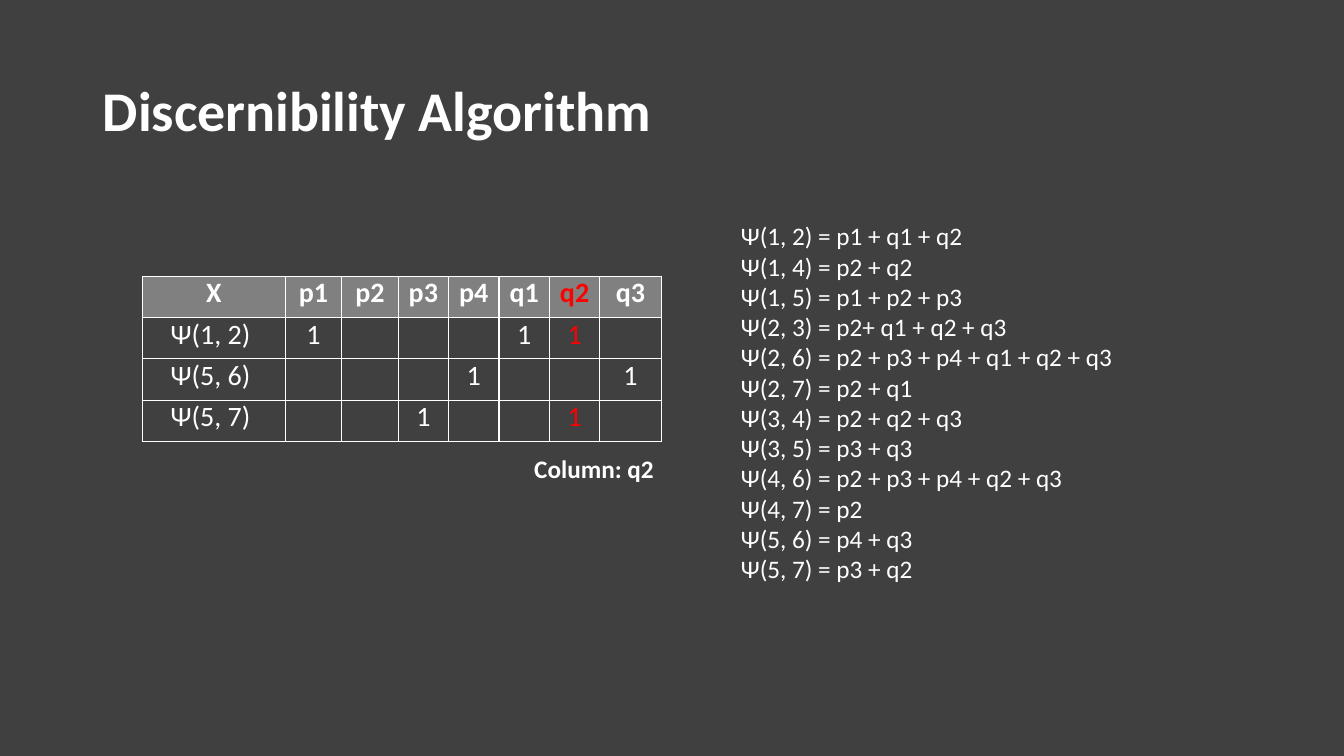
from dataclasses import dataclass

from lxml.etree import SubElement
from pptx import Presentation
from pptx.dml.color import RGBColor as Color
from pptx.enum.text import MSO_ANCHOR as Anchor, MSO_AUTO_SIZE as Fit, PP_ALIGN as Align
from pptx.oxml.ns import qn
from pptx.util import Inches, Pt


@dataclass(frozen=True)
class Theme:
    font: str = "Calibri"
    back: str = "404040"
    head: str = "808080"
    text: str = "FFFFFF"
    mark: str = "FF0000"
    title: int = 40
    cell: int = 20
    body: int = 18
    rule: int = 1


@dataclass(frozen=True)
class Row:
    label: str
    terms: tuple[str, ...]


@dataclass(frozen=True)
class Note:
    box: tuple[float, float, float, float]
    text: str
    bold: bool = False
    level: int = 0


THEME = Theme()
CHOSEN = "q2"
HEADS = ("X", "p1", "p2", "p3", "p4", "q1", "q2", "q3")
WIDTHS = (1.42, 0.56, 0.56, 0.5, 0.5, 0.5, 0.5, 0.61)
HEIGHT = 0.41
ROWS = (
    Row("Ψ(1, 2) ", ("p1", "q1", "q2")),
    Row("Ψ(5, 6) ", ("p4", "q3")),
    Row("Ψ(5, 7) ", ("p3", "q2")),
)
RULES = """Ψ(1, 2) = p1 + q1 + q2
Ψ(1, 4) = p2 + q2
Ψ(1, 5) = p1 + p2 + p3
Ψ(2, 3) = p2+ q1 + q2 + q3
Ψ(2, 6) = p2 + p3 + p4 + q1 + q2 + q3
Ψ(2, 7) = p2 + q1
Ψ(3, 4) = p2 + q2 + q3
Ψ(3, 5) = p3 + q3
Ψ(4, 6) = p2 + p3 + p4 + q2 + q3
Ψ(4, 7) = p2
Ψ(5, 6) = p4 + q3
Ψ(5, 7) = p3 + q2"""
NOTES = (
    Note((6.75, 2.14, 5.13, 3.74), RULES, level=1),
    Note((5.2, 4.45, 1.55, 0.4), f"Column: {CHOSEN}", bold=True),
)


def put(frame, text: str, *, size: int, color: str = THEME.text, bold: bool = False,
        align=Align.LEFT, level: int = 0, space: float = 1.0) -> None:
    """Write each line of text as one paragraph."""
    for i, line in enumerate(text.split("\n")):
        para = frame.add_paragraph() if i else frame.paragraphs[0]
        para.alignment, para.level, para.line_spacing = align, level, space
        para.font.size = Pt(size)
        if not line:
            continue
        run = para.add_run()
        run.text = line
        font = run.font
        font.name, font.size, font.bold = THEME.font, Pt(size), bold
        font.color.rgb = Color.from_string(color)


def frame_cell(cell) -> None:
    """Rule all four sides of a cell; borders must come before its fill."""
    props = cell._tc.get_or_add_tcPr()
    for side in ("lnL", "lnR", "lnT", "lnB"):
        line = SubElement(props, qn(f"a:{side}"), w=str(Pt(THEME.rule)))
        fill = SubElement(line, qn("a:solidFill"))
        SubElement(fill, qn("a:srgbClr"), val=THEME.text)


def add_title(slide, text: str) -> None:
    title = slide.shapes.title
    title.left, title.top = Inches(0.92), Inches(0.4)
    title.width, title.height = Inches(11.5), Inches(1.45)
    frame = title.text_frame
    frame.vertical_anchor = Anchor.MIDDLE
    put(frame, text, size=THEME.title, bold=True, space=0.9)


def add_grid(slide) -> None:
    grid = [HEADS] + [
        (row.label, *("1" if head in row.terms else "" for head in HEADS[1:]))
        for row in ROWS
    ]
    table = slide.shapes.add_table(
        len(grid), len(HEADS), Inches(1.41), Inches(2.74),
        Inches(sum(WIDTHS)), Inches(HEIGHT * len(grid))).table
    table.horz_banding = False
    for col, width in zip(table.columns, WIDTHS):
        col.width = Inches(width)
    for r, texts in enumerate(grid):
        table.rows[r].height = Inches(HEIGHT)
        for c, text in enumerate(texts):
            cell = table.cell(r, c)
            cell.margin_left = cell.margin_right = Inches(0.07)
            cell.margin_top = cell.margin_bottom = 0
            frame_cell(cell)
            if r == 0:
                cell.fill.solid()
                cell.fill.fore_color.rgb = Color.from_string(THEME.head)
            else:
                cell.fill.background()
            color = THEME.mark if HEADS[c] == CHOSEN else THEME.text
            put(cell.text_frame, text, size=THEME.cell, color=color,
                bold=r == 0, align=Align.CENTER)


def add_note(slide, note: Note) -> None:
    frame = slide.shapes.add_textbox(*map(Inches, note.box)).text_frame
    frame.word_wrap = True
    frame.auto_size = Fit.SHAPE_TO_FIT_TEXT
    put(frame, note.text, size=THEME.body, bold=note.bold, level=note.level)


def main() -> None:
    deck = Presentation()
    deck.slide_width, deck.slide_height = Inches(13.33), Inches(7.5)
    slide = deck.slides.add_slide(deck.slide_layouts[5])
    fill = slide.background.fill
    fill.solid()
    fill.fore_color.rgb = Color.from_string(THEME.back)
    add_title(slide, "Discernibility Algorithm")
    add_grid(slide)
    for note in NOTES:
        add_note(slide, note)
    deck.save("out.pptx")


if __name__ == "__main__":
    main()
